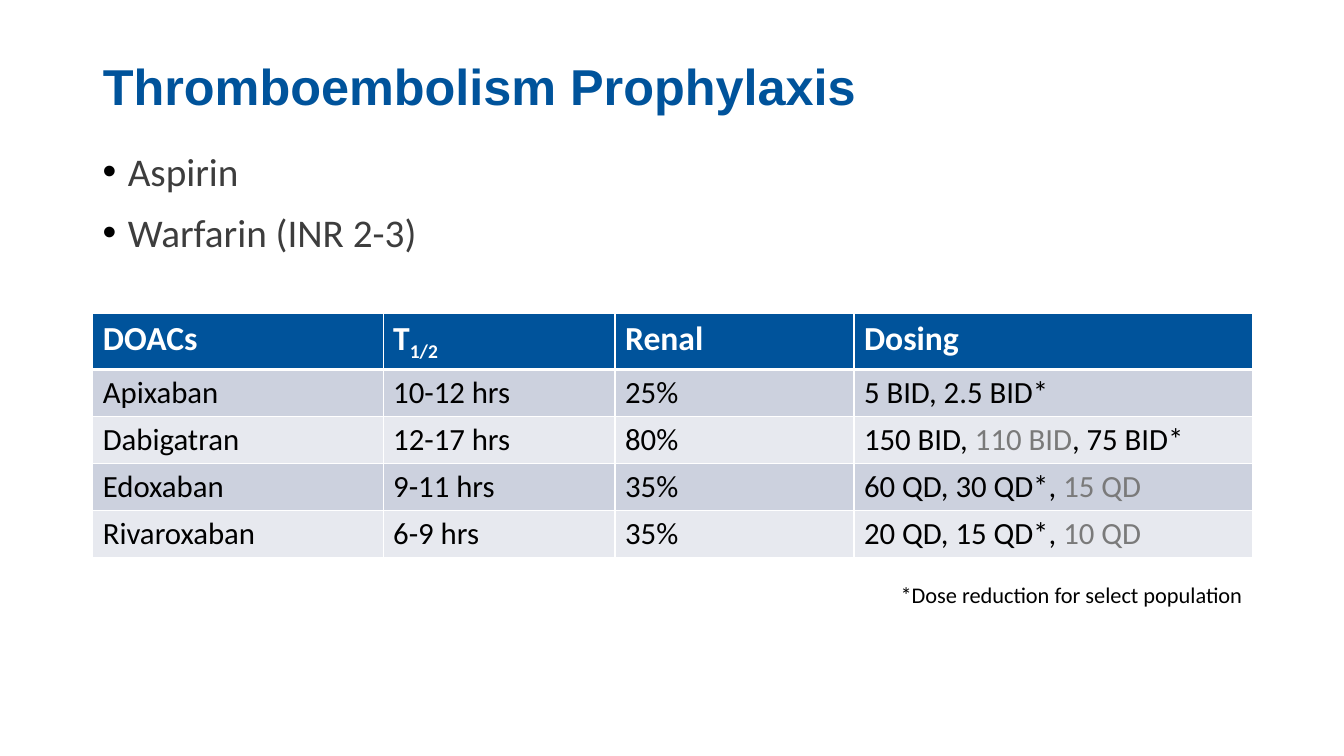
from dataclasses import dataclass

from lxml.etree import SubElement
from pptx import Presentation
from pptx.dml.color import RGBColor
from pptx.enum.text import MSO_ANCHOR, MSO_AUTO_SIZE, PP_ALIGN
from pptx.oxml.ns import qn
from pptx.util import Inches, Pt

BLUE = RGBColor(0x00, 0x53, 0x9B)
WHITE = RGBColor(0xFF, 0xFF, 0xFF)
BLACK = RGBColor(0, 0, 0)
DARK = RGBColor(0x3D, 0x3D, 0x3D)
GREY = RGBColor(0x7A, 0x7A, 0x7A)
BANDS = (RGBColor(0xCC, 0xD1, 0xDE), RGBColor(0xE7, 0xE9, 0xEF))

LEFT, WIDTH = 0.92, 11.5
COLS = (2.88, 2.3, 2.37, 3.95)
ROW = 0.41


@dataclass(frozen=True)
class Style:
    size: int
    color: RGBColor
    bold: bool = False
    font: str = "Calibri"
    shift: int = 0


@dataclass(frozen=True)
class Part:
    text: str
    style: Style


TITLE = Style(36, BLUE, True, "Arial")
ITEM = Style(28, DARK)
HEAD = Style(24, WHITE, True)
SUB = Style(24, WHITE, True, shift=-25)
CELL = Style(22, BLACK)
FADED = Style(22, GREY)
NOTE = Style(16, BLACK)

HEADER = (
    [Part("DOACs", HEAD)],
    [Part("T", HEAD), Part("1/2", SUB)],
    [Part("Renal", HEAD)],
    [Part("Dosing", HEAD)],
)
DRUGS = (
    ("Apixaban", "10-12 hrs", "25%", [Part("5 BID, 2.5 BID*", CELL)]),
    ("Dabigatran", "12-17 hrs", "80%",
     [Part("150 BID, ", CELL), Part("110 BID", FADED), Part(", 75 BID*", CELL)]),
    ("Edoxaban", "9-11 hrs", "35%",
     [Part("60 QD, 30 QD*, ", CELL), Part("15 QD", FADED)]),
    ("Rivaroxaban", "6-9 hrs", "35%",
     [Part("20 QD, 15 QD*, ", CELL), Part("10 QD", FADED)]),
)


def add_parts(para, parts: list[Part]) -> None:
    for part in parts:
        run = para.add_run()
        run.text = part.text
        style = part.style
        run.font.size = Pt(style.size)
        run.font.name = style.font
        run.font.bold = style.bold
        run.font.color.rgb = style.color
        if style.shift:
            run.font._element.set("baseline", str(style.shift * 1000))


def add_bullet(para) -> None:
    props = para._p.get_or_add_pPr()
    indent = Inches(0.25)
    props.set("marL", str(indent))
    props.set("indent", str(-indent))
    color = SubElement(props, qn("a:buClr"))
    SubElement(color, qn("a:srgbClr"), val=str(BLACK))
    SubElement(props, qn("a:buFont"), typeface="Arial")
    SubElement(props, qn("a:buChar"), char="•")


def set_edges(cell, bottom: int) -> None:
    """Draw white cell borders, with the bottom one of the given weight."""
    props = cell._tc.get_or_add_tcPr()
    weights = {"a:lnL": 1, "a:lnR": 1, "a:lnT": 1, "a:lnB": bottom}
    for place, (tag, weight) in enumerate(weights.items()):
        line = SubElement(props, qn(tag), w=str(Pt(weight)))
        fill = SubElement(line, qn("a:solidFill"))
        SubElement(fill, qn("a:srgbClr"), val=str(WHITE))
        props.insert(place, line)


def add_title(slide) -> None:
    title = slide.shapes.title
    title.left, title.top = Inches(LEFT), Inches(0)
    title.width, title.height = Inches(WIDTH), Inches(1.21)
    frame = title.text_frame
    frame.auto_size = MSO_AUTO_SIZE.NONE
    frame.vertical_anchor = MSO_ANCHOR.BOTTOM
    para = frame.paragraphs[0]
    para.alignment = PP_ALIGN.LEFT
    para.line_spacing = 0.9
    add_parts(para, [Part("Thromboembolism Prophylaxis", TITLE)])


def add_list(slide) -> None:
    box = slide.shapes.add_textbox(
        Inches(LEFT), Inches(1.41), Inches(WIDTH), Inches(1.37))
    frame = box.text_frame
    frame.word_wrap = True
    for index, text in enumerate(("Aspirin", "Warfarin (INR 2-3)")):
        para = frame.add_paragraph() if index else frame.paragraphs[0]
        add_bullet(para)
        if index:
            para.space_before = Pt(10)
        add_parts(para, [Part(text, ITEM)])


def add_grid(slide) -> None:
    body = [[*([Part(text, CELL)] for text in texts), dose]
            for *texts, dose in DRUGS]
    rows = [HEADER, *body]
    table = slide.shapes.add_table(
        len(rows), len(COLS), Inches(LEFT), Inches(3.11),
        Inches(WIDTH), Inches(ROW * len(rows))).table
    for column, width in zip(table.columns, COLS):
        column.width = Inches(width)
    for r, row in enumerate(rows):
        table.rows[r].height = Inches(ROW)
        for c, parts in enumerate(row):
            cell = table.cell(r, c)
            cell.fill.solid()
            cell.fill.fore_color.rgb = BANDS[(r - 1) % 2] if r else BLUE
            set_edges(cell, 1 if r else 3)
            add_parts(cell.text_frame.paragraphs[0], parts)


def add_note(slide) -> None:
    box = slide.shapes.add_textbox(
        Inches(7.87), Inches(5.72), Inches(4.55), Inches(0.37))
    box.text_frame.word_wrap = True
    para = box.text_frame.paragraphs[0]
    para.alignment = PP_ALIGN.RIGHT
    add_parts(para, [Part("*Dose reduction for select population", NOTE)])


def main() -> None:
    deck = Presentation()
    deck.slide_width, deck.slide_height = Inches(13.33), Inches(7.5)
    slide = deck.slides.add_slide(deck.slide_layouts[5])
    add_title(slide)
    add_list(slide)
    add_grid(slide)
    add_note(slide)
    deck.save("out.pptx")


if __name__ == "__main__":
    main()
